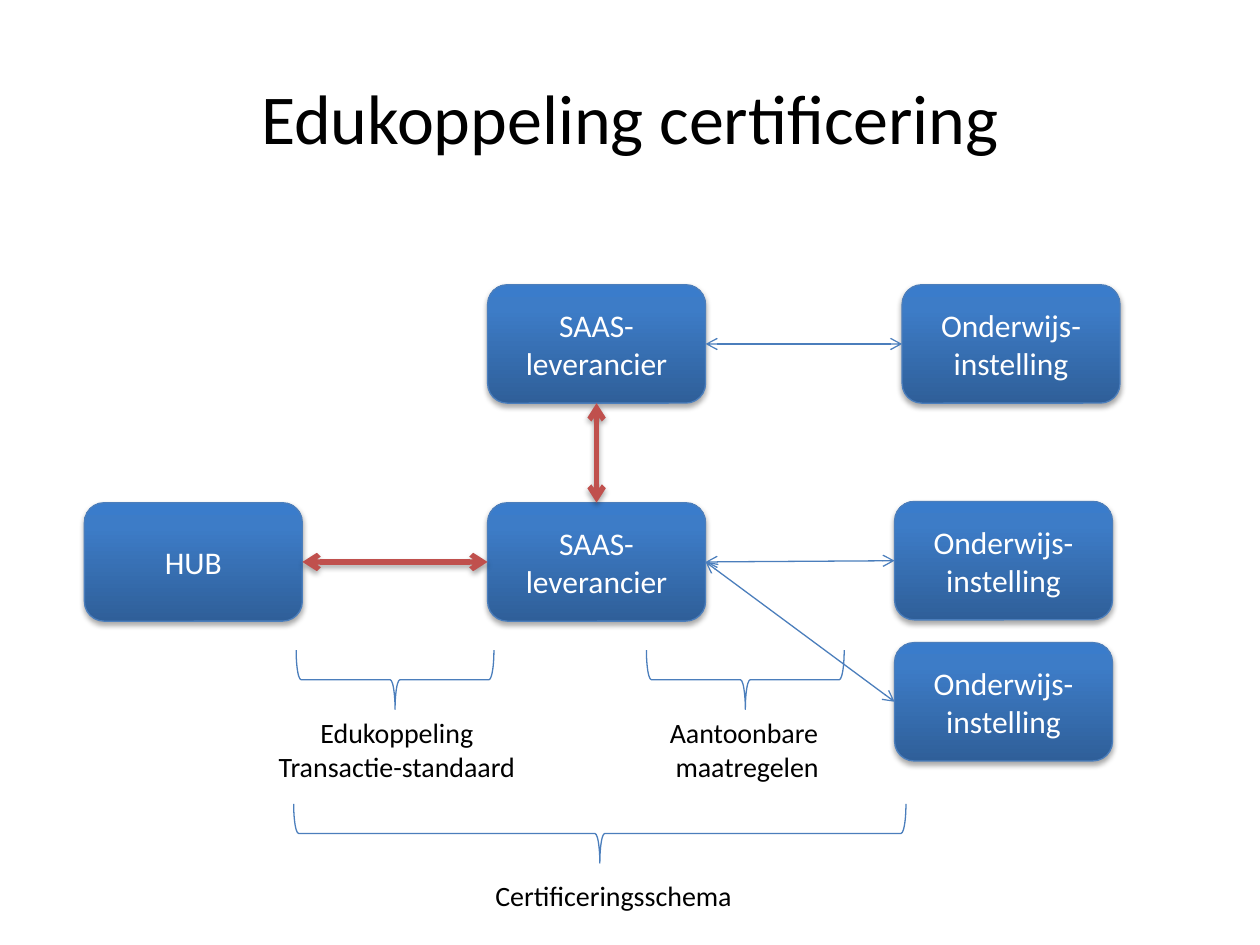
from lxml.etree import SubElement
from copy import deepcopy
from pptx import Presentation
from pptx.dml.color import RGBColor
from pptx.enum.shapes import MSO_CONNECTOR as LINK, MSO_SHAPE as SHAPE
from pptx.enum.text import MSO_ANCHOR as ANCHOR, PP_ALIGN as ALIGN
from pptx.oxml.ns import qn
from pptx.util import Inches, Pt

COLORS = {"edge": "4B7EBC", "secure": "C0504D", "dark": "2F5F99", "mid": "3D7CC7",
          "light": "3A7CCB", "white": "FFFFFF", "black": "000000"}
NODE_W, NODE_H = 1.73, 0.94
BRACE_H = 0.47
NODES = {
    "hub": (0.67, 3.99, "HUB"),
    "saas": (3.87, 3.99, "SAAS-leverancier"),
    "school": (7.1, 3.98, "Onderwijs- instelling"),
    "school_low": (7.1, 5.1, "Onderwijs- instelling"),
    "saas_top": (3.87, 2.26, "SAAS-leverancier"),
    "school_top": (7.16, 2.26, "Onderwijs- instelling"),
}
PLAIN = {"color": "edge", "width": 0.75, "shadow": False}
SECURE = {"color": "secure", "width": 3, "shadow": True}
LINKS = [
    ("hub", "right", "saas", "left", SECURE),
    ("saas", "right", "school", "left", PLAIN),
    ("saas", "right", "school_low", "left", PLAIN),
    ("saas", "top", "saas_top", "bottom", SECURE),
    ("saas_top", "right", "school_top", "left", PLAIN),
]
SIDES = {"left": (0, 0.5), "right": (1, 0.5), "top": (0.5, 0), "bottom": (0.5, 1)}
BRACES = [(2.33, 6.38, 4.86), (2.35, 5.16, 1.57), (5.13, 5.16, 1.57)]
CAPTIONS = [
    ((1.59, 6.92, 6.56, 0.37), ["Certificeringsschema"]),
    ((2.09, 5.63, 2.12, 0.64), ["Edukoppeling Transactie-standaard"]),
    ((4.87, 5.63, 2.12, 0.64), ["Aantoonbare ", "maatregelen"]),
]


def rgb(name):
    """Return the named colour."""
    return RGBColor.from_string(COLORS[name])


def inches(*values):
    """Turn plain numbers into lengths."""
    return [Inches(value) for value in values]


def write(frame, lines, size, color):
    """Write centred paragraphs into a text frame."""
    frame.word_wrap = True
    for index, line in enumerate(lines):
        para = frame.add_paragraph() if index else frame.paragraphs[0]
        para.alignment = ALIGN.CENTER
        span = para.add_run()
        span.text = line
        values = {"size": Pt(size), "name": "Calibri"}
        for key, value in values.items():
            setattr(span.font, key, value)
        span.font.color.rgb = rgb(color)


def set_line(shape, color, width):
    """Give a shape a solid outline."""
    shape.line.color.rgb = rgb(color)
    shape.line.width = Pt(width)


def set_effects(shape, shadow):
    """Give a shape a soft shadow below it, or none."""
    effects = SubElement(shape.element.spPr, qn("a:effectLst"))
    if shadow:
        outer = SubElement(effects, qn("a:outerShdw"), blurRad="40000", dist="23000",
                           dir="5400000", rotWithShape="0")
        color = SubElement(outer, qn("a:srgbClr"), val=COLORS["black"])
        SubElement(color, qn("a:alpha"), val="35000")


def set_gradient(fill):
    """Fill with the three-stop blue that is dark at the bottom."""
    fill.gradient()
    fill.gradient_angle = 90
    stops = shape_stops = fill.gradient_stops
    for stop, name, position in zip(stops, ("dark", "mid"), (0, 0.8)):
        stop.color.rgb = rgb(name)
        stop.position = position
    return shape_stops


def add_node(page, left, top, label):
    """Draw one party as a rounded blue box."""
    box = page.shapes.add_shape(SHAPE.ROUNDED_RECTANGLE,
                                *inches(left, top, NODE_W, NODE_H))
    set_gradient(box.fill)
    stop_list = box.element.spPr.find(qn("a:gradFill")).find(qn("a:gsLst"))
    stop_list.append(deepcopy(stop_list[-1]))
    last = box.fill.gradient_stops[2]
    last.color.rgb = rgb("light")
    last.position = 1
    set_line(box, "edge", 0.75)
    set_effects(box, True)
    box.text_frame.vertical_anchor = ANCHOR.MIDDLE
    write(box.text_frame, [label], 18, "white")


def anchor(node, side):
    """Return the middle of one side of a node."""
    left, top, _ = NODES[node]
    across, down = SIDES[side]
    return inches(left + across * NODE_W, top + down * NODE_H)


def add_link(page, start, end, color, width, shadow):
    """Draw a two-headed arrow between two points."""
    link = page.shapes.add_connector(LINK.STRAIGHT, *start, *end)
    set_line(link, color, width)
    outline = link.element.spPr.find(qn("a:ln"))
    for tag in ("a:headEnd", "a:tailEnd"):
        SubElement(outline, qn(tag), type="arrow")
    set_effects(link, shadow)


def add_brace(page, left, top, width):
    """Draw a brace that spans the given width and points down."""
    offset = (width - BRACE_H) / 2
    brace = page.shapes.add_shape(
        SHAPE.RIGHT_BRACE, *inches(left + offset, top - offset, BRACE_H, width))
    brace.rotation = 90
    brace.fill.background()
    brace.shadow.inherit = False
    set_line(brace, "edge", 0.75)


def add_caption(page, area, lines):
    """Place a caption under a brace."""
    box = page.shapes.add_textbox(*inches(*area))
    write(box.text_frame, lines, 16, "black")


def add_title(page, area, text):
    """Fill and place the title placeholder."""
    title = page.shapes.title
    for key, value in zip(("left", "top", "width", "height"), inches(*area)):
        setattr(title, key, value)
    title.text_frame.vertical_anchor = ANCHOR.MIDDLE
    write(title.text_frame, [text], 40, "black")


def main():
    """Build the certification slide."""
    deck = Presentation()
    deck.slide_width, deck.slide_height = inches(10, 7.5)
    page = deck.slides.add_slide(deck.slide_layouts[5])
    add_title(page, (0.5, 0.3, 9, 1.25), "Edukoppeling certificering")
    for node in NODES.values():
        add_node(page, *node)
    for first, first_side, second, second_side, style in LINKS:
        add_link(page, anchor(first, first_side), anchor(second, second_side), **style)
    for brace in BRACES:
        add_brace(page, *brace)
    for area, lines in CAPTIONS:
        add_caption(page, area, lines)
    deck.save("out.pptx")


if __name__ == "__main__":
    main()
